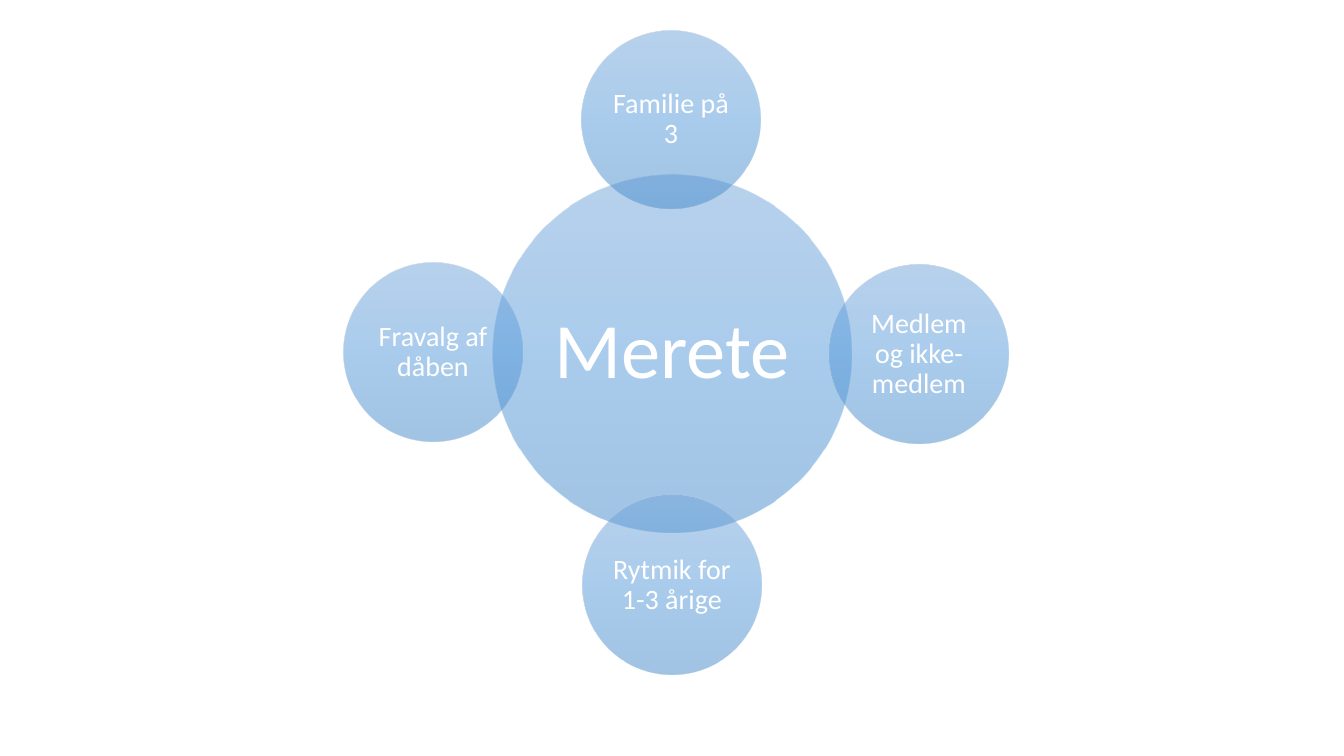
from dataclasses import dataclass

from lxml import etree
from pptx import Presentation, util as u
from pptx.dml.color import RGBColor
from pptx.enum import shapes, text
from pptx.oxml import ns


@dataclass(frozen=True)
class Theme:
    font: str = "Calibri"
    text: str = "FFFFFF"
    stops: tuple[tuple[int, str], ...] = ((0, "71A6DB"), (50, "559BDB"), (100, "448ACA"))
    opacity: int = 50
    hub_size: int = 56
    topic_size: int = 20


@dataclass(frozen=True)
class Circle:
    """A labelled circle; centre and diameter in grid cells."""
    label: str
    col: float
    row: float
    diameter: float
    size: int
    inset: float


THEME = Theme()
CELL = u.Inches(0.1)
HUB_DIAMETER, TOPIC_DIAMETER = 35.5, 17.7


def topic(label: str, col: float, row: float) -> Circle:
    return Circle(label, col, row, TOPIC_DIAMETER, THEME.topic_size, 0.3)


CIRCLES = (
    Circle("Merete", 66.65, 35.05, HUB_DIAMETER, THEME.hub_size, 0.8),
    topic("Familie på 3", 66.55, 11.85),
    topic("Medlem og ikke-medlem", 91.15, 35.15),
    topic("Rytmik for 1-3 årige", 66.65, 58.05),
    topic("Fravalg af dåben", 42.95, 34.95),
)


def cells(count: float) -> u.Emu:
    return u.Emu(round(count * CELL))


def fill_translucent(s) -> None:
    """Fill with the theme's top-to-bottom gradient at its opacity."""
    s.fill.gradient()
    s.fill.gradient_angle = 270
    stops = s._element.spPr.find(".//" + ns.qn("a:gsLst"))
    for old in list(stops):
        stops.remove(old)
    for position, colour in THEME.stops:
        stop = etree.SubElement(stops, ns.qn("a:gs"), pos=str(position * 1000))
        rgb = etree.SubElement(stop, ns.qn("a:srgbClr"), val=colour)
        etree.SubElement(rgb, ns.qn("a:alpha"), val=str(THEME.opacity * 1000))


def draw_circle(group, circle: Circle) -> None:
    d = circle.diameter
    s = group.shapes.add_shape(
        shapes.MSO_SHAPE.OVAL, cells(circle.col - d / 2), cells(circle.row - d / 2),
        cells(d), cells(d))
    s.shadow.inherit = False
    s.line.fill.background()
    fill_translucent(s)

    tf = s.text_frame
    tf.word_wrap = True
    tf.vertical_anchor = text.MSO_ANCHOR.MIDDLE
    tf.margin_left = tf.margin_right = tf.margin_top = tf.margin_bottom = cells(circle.inset)
    p = tf.paragraphs[0]
    p.alignment = text.PP_ALIGN.CENTER
    p.line_spacing = 0.9
    r = p.add_run()
    r.text = circle.label
    r.font.name = THEME.font
    r.font.size = u.Pt(circle.size)
    r.font.color.rgb = RGBColor.from_string(THEME.text)


def main() -> None:
    prs = Presentation()
    prs.slide_width, prs.slide_height = u.Inches(13.33), u.Inches(7.5)
    slide = prs.slides.add_slide(prs.slide_layouts[6])
    group = slide.shapes.add_group_shape()
    for circle in CIRCLES:
        draw_circle(group, circle)
    prs.save("out.pptx")


if __name__ == "__main__":
    main()
